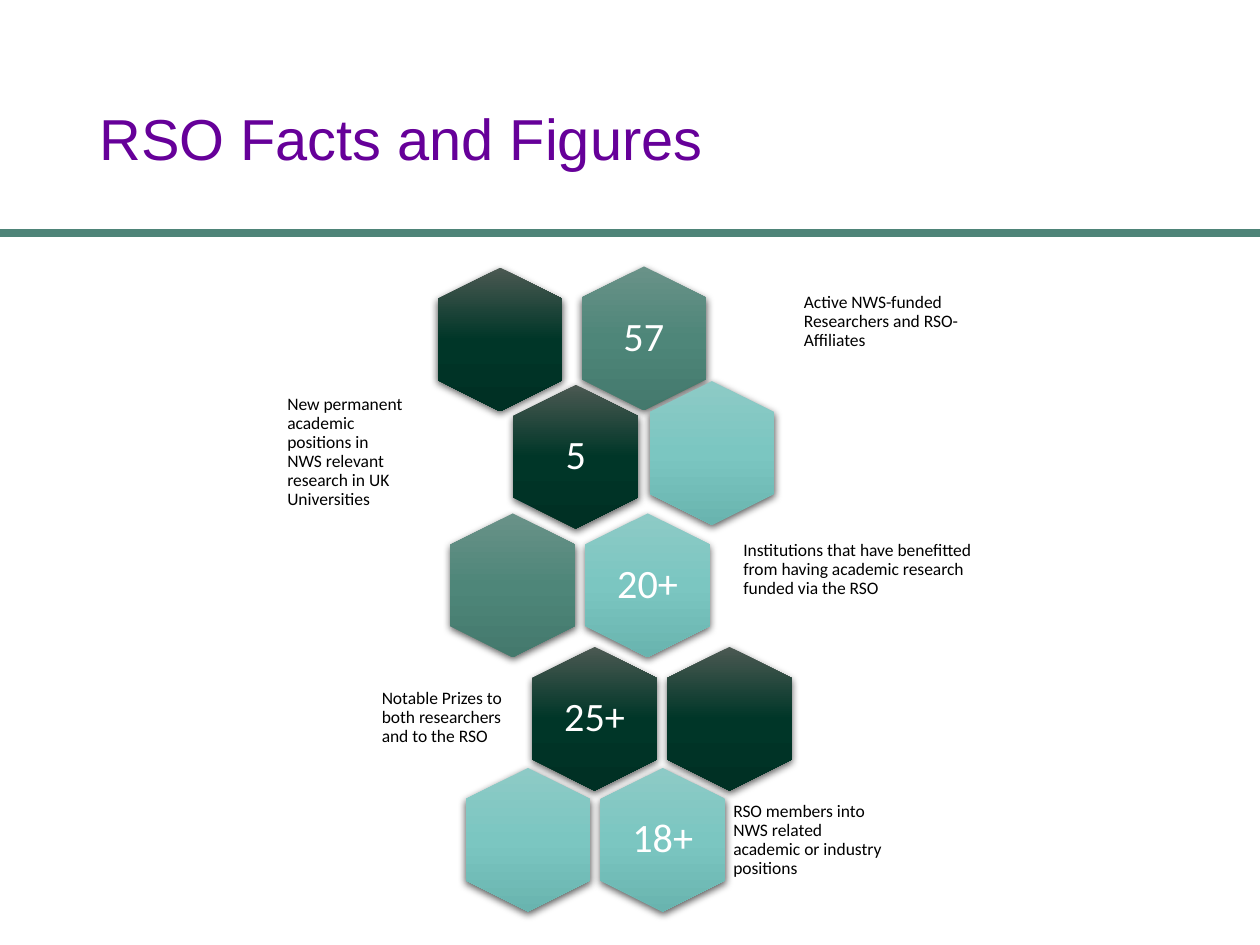
from pptx import Presentation
from pptx.dml.color import RGBColor
from pptx.enum.shapes import MSO_CONNECTOR, MSO_SHAPE
from pptx.enum.text import MSO_ANCHOR, MSO_AUTO_SIZE, PP_ALIGN
from pptx.oxml import parse_xml
from pptx.oxml.ns import nsdecls, qn
from pptx.util import Inches, Pt

COLORS = {
    "title": "660099",
    "rule": "4E8478",
    "number": "FFFFFF",
    "label": "000000",
    "shadow": "000000",
}
TONES = {
    "dark": ("4B5952", "003628", "003024"),
    "green": ("699288", "4E8679", "44796D"),
    "aqua": ("8DCAC6", "7BC6C1", "69B4AF"),
}
HEX_WIDTH, HEX_HEIGHT = 1.14, 0.99
NUMBER_WIDTH, NUMBER_HEIGHT = 0.68, 0.78
HEXAGONS = [
    ("green", 4.54, 2.19, "57"),
    ("dark", 3.40, 2.20, None),
    ("dark", 4.00, 3.13, "5"),
    ("aqua", 5.08, 3.10, None),
    ("aqua", 4.57, 4.15, "20+"),
    ("green", 3.50, 4.15, None),
    ("dark", 4.15, 5.21, "25+"),
    ("dark", 5.22, 5.21, None),
    ("aqua", 4.69, 6.17, "18+"),
    ("aqua", 3.62, 6.17, None),
]
LABELS = [
    (6.34, 2.01, 1.52, 1.09, "Active NWS-funded Researchers and RSO-Affiliates"),
    (2.24, 3.25, 1.01, 0.68,
     "New permanent academic positions in NWS relevant research in UK Universities"),
    (5.86, 3.84, 2.00, 1.37,
     "Institutions that have benefitted from having academic research funded via the RSO"),
    (2.99, 5.36, 1.23, 0.68, "Notable Prizes to both researchers and to the RSO"),
    (5.78, 6.33, 1.27, 0.68,
     "RSO members into NWS related academic or industry positions"),
]


def write_text(frame, text, font, size, color, align=PP_ALIGN.LEFT):
    """Write one middle-anchored paragraph into a text frame."""
    frame.auto_size = MSO_AUTO_SIZE.NONE
    frame.vertical_anchor = MSO_ANCHOR.MIDDLE
    para = frame.paragraphs[0]
    para.alignment = align
    para.line_spacing = 0.9
    span = para.add_run()
    span.text = text
    span.font.name = font
    span.font.size = Pt(size)
    span.font.color.rgb = RGBColor.from_string(COLORS[color])


def add_text(page, place, text, size, color, inset, align=PP_ALIGN.LEFT, wrap=True):
    """Add a text box with equal insets on all sides."""
    frame = page.shapes.add_textbox(*map(Inches, place)).text_frame
    frame.word_wrap = wrap
    frame.margin_left = frame.margin_right = Inches(inset)
    frame.margin_top = frame.margin_bottom = Inches(inset)
    write_text(frame, text, "Calibri", size, color, align)


def set_title(page):
    """Place and format the slide title."""
    title = page.shapes.title
    title.left, title.top = Inches(0.69), Inches(0.4)
    title.width, title.height = Inches(8.62), Inches(1.45)
    write_text(title.text_frame, "RSO Facts and Figures", "Arial", 33, "title")


def add_rule(page):
    """Draw the full-width rule under the title."""
    rule = page.shapes.add_connector(
        MSO_CONNECTOR.STRAIGHT, Inches(0), Inches(1.85), Inches(10), Inches(1.85))
    rule.line.color.rgb = RGBColor.from_string(COLORS["rule"])
    rule.line.width = Pt(4.5)
    rule._element.spPr.append(parse_xml(f"<a:effectLst {nsdecls('a')}/>"))


def add_hexagon(page, tone, left, top, number):
    """Add an upright shaded hexagon, with its number if it has one."""
    hexagon = page.shapes.add_shape(
        MSO_SHAPE.HEXAGON, Inches(left), Inches(top), Inches(HEX_WIDTH), Inches(HEX_HEIGHT))
    hexagon.rotation = 90
    hexagon.adjustments[0] = 0.25
    hexagon.line.fill.background()
    hexagon.shadow.inherit = False
    stops = "".join(
        f'<a:gs pos="{index * 50000}"><a:srgbClr val="{color}"/></a:gs>'
        for index, color in enumerate(TONES[tone]))
    properties = hexagon._element.spPr
    properties.find(qn("a:prstGeom")).addnext(parse_xml(
        f'<a:gradFill {nsdecls("a")} rotWithShape="0"><a:gsLst>{stops}</a:gsLst>'
        '<a:lin ang="5400000" scaled="0"/></a:gradFill>'))
    properties.find(qn("a:effectLst")).append(parse_xml(
        f'<a:outerShdw {nsdecls("a")} blurRad="{Pt(4.5)}" dist="{Pt(1.5)}" dir="5400000" '
        f'algn="ctr" rotWithShape="0"><a:srgbClr val="{COLORS["shadow"]}">'
        '<a:alpha val="63000"/></a:srgbClr></a:outerShdw>'))
    if number:
        place = (left + (HEX_WIDTH - NUMBER_WIDTH) / 2, top + (HEX_HEIGHT - NUMBER_HEIGHT) / 2,
                 NUMBER_WIDTH, NUMBER_HEIGHT)
        add_text(page, place, number, 23, "number", 0.1, PP_ALIGN.CENTER, wrap=False)


def main():
    """Build and save the slide."""
    deck = Presentation()
    deck.slide_width, deck.slide_height = Inches(10), Inches(7.5)
    page = deck.slides.add_slide(deck.slide_layouts[5])
    add_rule(page)
    set_title(page)
    for hexagon in HEXAGONS:
        add_hexagon(page, *hexagon)
    for *place, text in LABELS:
        add_text(page, place, text, 10, "label", 0.04)
    deck.save("out.pptx")


if __name__ == "__main__":
    main()
